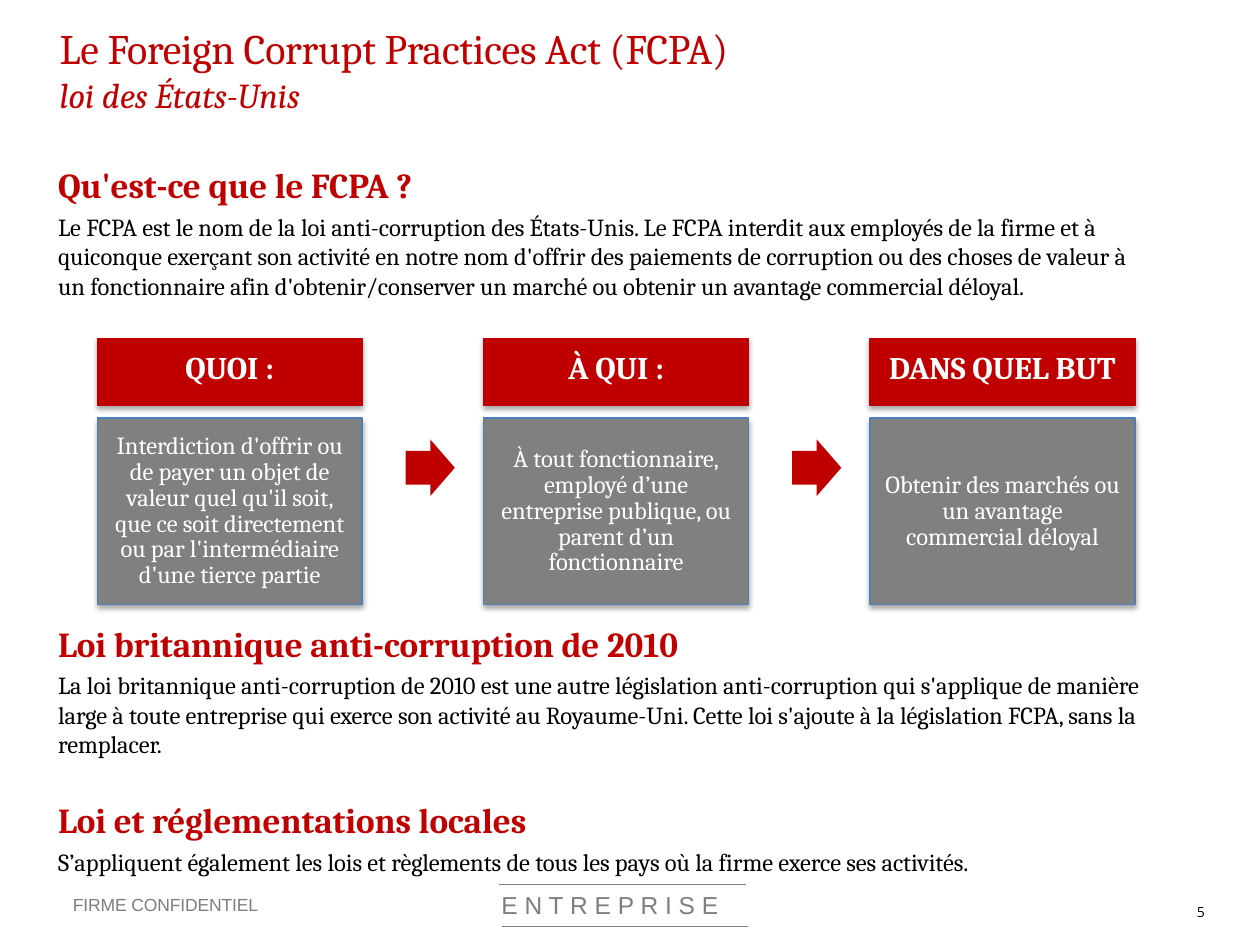
from dataclasses import dataclass
from typing import Optional

from lxml.etree import SubElement
from pptx import Presentation
from pptx.dml.color import RGBColor
from pptx.enum.shapes import MSO_CONNECTOR, MSO_SHAPE
from pptx.enum.text import MSO_ANCHOR as Anchor, MSO_AUTO_SIZE as AutoSize, PP_ALIGN as Align
from pptx.oxml.ns import qn
from pptx.util import Cm, Pt


@dataclass(frozen=True)
class Theme:
    red: RGBColor = RGBColor(0xC0, 0x00, 0x00)
    grey: RGBColor = RGBColor(0x80, 0x80, 0x80)
    footer: RGBColor = RGBColor(0x7E, 0x7E, 0x7E)
    blue: RGBColor = RGBColor(0x4B, 0x7E, 0xBC)
    black: RGBColor = RGBColor(0, 0, 0)
    white: RGBColor = RGBColor(0xFF, 0xFF, 0xFF)
    serif: str = "Cambria"
    sans: str = "Arial"
    number: str = "Open Sans"
    title: float = 24
    heading: float = 20
    label: float = 18
    body: float = 14
    small: float = 10
    tiny: float = 8


T = Theme()


@dataclass(frozen=True)
class Style:
    size: float
    color: RGBColor
    font: str = T.serif
    bold: bool = False
    italic: bool = False
    spacing: float = -0.06


@dataclass(frozen=True)
class Box:
    left: float
    top: float
    width: float
    height: float

    def cm(self) -> tuple:
        return Cm(self.left), Cm(self.top), Cm(self.width), Cm(self.height)


@dataclass(frozen=True)
class Para:
    text: str
    style: Style
    before: float = 0
    line: Optional[object] = None
    align: Align = Align.LEFT


@dataclass(frozen=True)
class Card:
    label: str
    lines: tuple


TITLE = Style(T.title, T.red, spacing=-0.15)
SUBTITLE = Style(T.heading, T.red, italic=True)
HEADING = Style(T.heading, T.red, bold=True)
BODY = Style(T.body, T.black)
LABEL = Style(T.label, T.white, bold=True)
CARD = Style(T.body, T.white)
BRAND = Style(T.body, T.footer, T.sans, spacing=0)
NOTICE = Style(T.small, T.footer, T.sans)
NUMBER = Style(T.tiny, T.black, T.number, spacing=0)

INTRO = (
    Para("Qu'est-ce que le FCPA ?", HEADING),
    Para("Le FCPA est le nom de la loi anti-corruption des États-Unis. Le FCPA interdit aux "
         "employés de la firme et à quiconque exerçant son activité en notre nom d'offrir des "
         "paiements de corruption ou des choses de valeur à un fonctionnaire afin "
         "d'obtenir/conserver un marché ou obtenir un avantage commercial déloyal.", BODY, 3.5),
)
OTHER_LAWS = (
    Para("Loi britannique anti-corruption de 2010", HEADING),
    Para("La loi britannique anti-corruption de 2010 est une autre législation anti-corruption "
         "qui s'applique de manière large à toute entreprise qui exerce son activité au "
         "Royaume-Uni. Cette loi s'ajoute à la législation FCPA, sans la remplacer.", BODY, 3.5),
    Para("Loi et réglementations locales", HEADING, 23),
    Para("S’appliquent également les lois et règlements de tous les pays où la firme exerce ses "
         "activités.", BODY, 3.5),
)
CARDS = (
    Card("QUOI :", ("Interdiction d'offrir ou de payer un objet de valeur quel qu'il soit, que "
                    "ce soit directement ou par l'intermédiaire d'une tierce partie",)),
    Card("À QUI :", ("À tout fonctionnaire,", "employé d’une entreprise publique, ou parent "
                     "d’un fonctionnaire")),
    Card("DANS QUEL BUT", ("Obtenir des marchés ou un avantage commercial déloyal",)),
)
CARD_LEFT, CARD_PITCH, CARD_WIDTH = 1.96, 7.79, 5.34
ARROW_OFFSET = 6.22


def add_run(p, text: str, style: Style) -> None:
    r = p.add_run()
    r.text = text
    f = r.font
    f.name, f.size, f.bold, f.italic = style.font, Pt(style.size), style.bold, style.italic
    f.color.rgb = style.color
    if style.spacing:
        r._r.get_or_add_rPr().set("spc", str(round(style.spacing * 100)))


def set_frame(tf, top: float = 0, wrap: bool = True) -> None:
    tf.auto_size = AutoSize.NONE
    tf.word_wrap = wrap
    tf.vertical_anchor = Anchor.TOP
    tf.margin_left = tf.margin_right = tf.margin_bottom = 0
    tf.margin_top = Cm(top)


def write(tf, paras: tuple) -> None:
    for i, para in enumerate(paras):
        p = tf.add_paragraph() if i else tf.paragraphs[0]
        p.alignment = para.align
        p.space_before = Pt(para.before)
        if para.line:
            p.line_spacing = para.line
        add_run(p, para.text, para.style)


def place(sp, box: Box) -> None:
    sp.left, sp.top, sp.width, sp.height = box.cm()


def fill_body(sp, box: Box, paras: tuple) -> None:
    place(sp, box)
    tf = sp.text_frame
    set_frame(tf, 0.2)
    write(tf, paras)
    for p in tf.paragraphs:
        pPr = p._p.get_or_add_pPr()
        pPr.set("marL", "0")
        pPr.set("indent", "0")
        SubElement(pPr, qn("a:buNone"))


def add_text(s, box: Box, para: Para, wrap: bool = True) -> None:
    tf = s.shapes.add_textbox(*box.cm()).text_frame
    set_frame(tf, wrap=wrap)
    write(tf, (para,))


def add_panel(s, box: Box, fill: RGBColor, line: RGBColor, paras: tuple) -> None:
    sp = s.shapes.add_shape(MSO_SHAPE.RECTANGLE, *box.cm())
    sp.fill.solid()
    sp.fill.fore_color.rgb = fill
    sp.line.color.rgb = line
    sp.line.width = Pt(0.75)
    sp.text_frame.word_wrap = True
    sp.text_frame.vertical_anchor = Anchor.MIDDLE
    write(sp.text_frame, paras)


def add_card(s, left: float, card: Card) -> None:
    add_panel(s, Box(left, 6.82, CARD_WIDTH, 1.35), T.red, T.red,
              (Para(card.label, LABEL, line=Pt(15.8), align=Align.CENTER),))
    add_panel(s, Box(left, 8.43, CARD_WIDTH, 3.76), T.grey, T.blue,
              tuple(Para(text, CARD, line=0.88, align=Align.CENTER) for text in card.lines))


def add_arrow(s, left: float) -> None:
    sp = s.shapes.add_shape(MSO_SHAPE.RIGHT_ARROW, *Box(left, 8.86, 0.99, 1.14).cm())
    sp.adjustments[0], sp.adjustments[1] = 0.6, 0.5
    sp.shadow.inherit = False
    sp.fill.solid()
    sp.fill.fore_color.rgb = T.red
    sp.line.fill.background()


def add_rule(s, left: float, top: float) -> None:
    c = s.shapes.add_connector(MSO_CONNECTOR.STRAIGHT, Cm(left), Cm(top), Cm(left + 4.97), Cm(top))
    c.line.color.rgb = T.footer
    c.line.width = Pt(0.5)
    SubElement(c._element.spPr, qn("a:effectLst"))


def main() -> None:
    prs = Presentation()
    prs.slide_width, prs.slide_height = Cm(25.4), Cm(19.05)
    s = prs.slides.add_slide(prs.slide_layouts[3])
    title, intro, other_laws = s.placeholders

    place(title, Box(1.2, 0.43, 22.38, 1.9))
    set_frame(title.text_frame, 0.03)
    p = title.text_frame.paragraphs[0]
    p.alignment = Align.LEFT
    add_run(p, "Le Foreign Corrupt Practices Act (FCPA)", TITLE)
    p.add_line_break()
    add_run(p, "loi des États-Unis", SUBTITLE)

    fill_body(intro, Box(1.17, 3.1, 22.17, 3), INTRO)
    fill_body(other_laws, Box(1.17, 12.34, 22.17, 5.26), OTHER_LAWS)

    for i, card in enumerate(CARDS):
        left = CARD_LEFT + i * CARD_PITCH
        add_card(s, left, card)
        if i < len(CARDS) - 1:
            add_arrow(s, left + ARROW_OFFSET)

    add_rule(s, 10.06, 17.83)
    add_rule(s, 10.11, 18.68)
    add_text(s, Box(10.11, 17.96, 4.83, 0.64), Para("E N T R E P R I S E", BRAND, line=Pt(16.5)))
    add_text(s, Box(1.47, 18.03, 4.2, 0.46), Para("FIRME CONFIDENTIEL", NOTICE))
    add_text(s, Box(24.13, 18.21, 0.3, 0.4), Para("5", NUMBER), wrap=False)

    prs.save("out.pptx")


if __name__ == "__main__":
    main()
